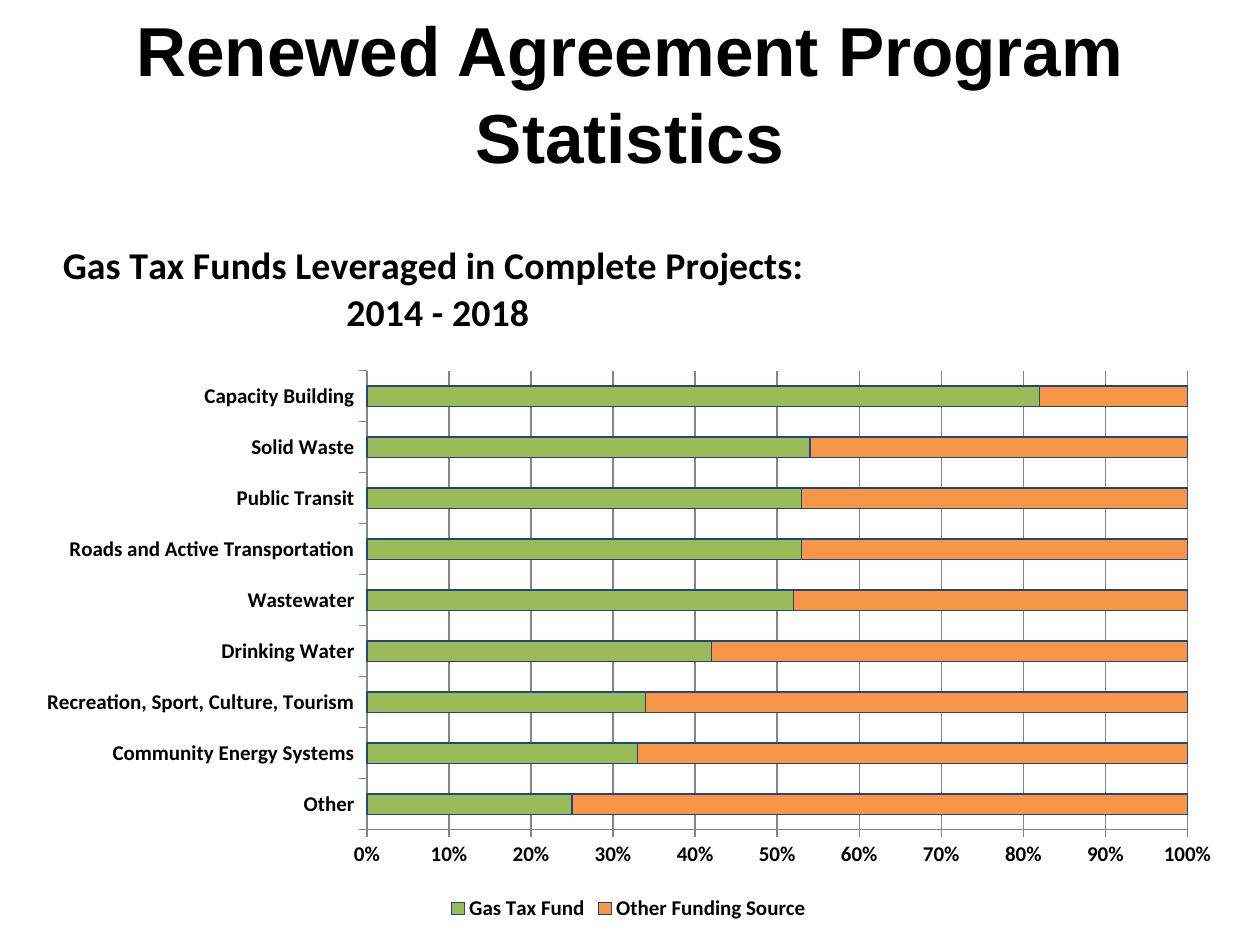
from dataclasses import dataclass

from lxml import etree
from pptx import Presentation
from pptx import util as u
from pptx.chart.data import CategoryChartData
from pptx.dml.color import RGBColor
from pptx.enum import chart as ch
from pptx.enum import text as tx
from pptx.oxml import ns

HUES = {"ink": "000000", "grid": "868686", "edge": "1F497D",
        "gas": "9BBB59", "other": "F79646"}


@dataclass
class Fund:
    name: str
    hue: str
    vals: list[float]


KINDS = ["Other", "Community Energy Systems", "Recreation, Sport, Culture, Tourism",
         "Drinking Water", "Wastewater", "Roads and Active Transportation",
         "Public Transit", "Solid Waste", "Capacity Building"]
SHARES = [0.25, 0.33, 0.34, 0.42, 0.52, 0.53, 0.53, 0.54, 0.82]
FUNDS = [Fund("Gas Tax Fund", "gas", SHARES),
         Fund("Other Funding Source", "other", [round(1 - s, 2) for s in SHARES])]


def color(hue: str) -> RGBColor:
    return RGBColor.from_string(HUES[hue])


def style(font, size: float, face: str = "Calibri", bold: bool = True) -> None:
    font.name, font.size, font.bold = face, u.Pt(size), bold
    font.color.rgb = color("ink")


def write(frame, lines: list[str], size: float, face: str = "Calibri",
          gap: float | None = None) -> None:
    for i, line in enumerate(lines):
        para = frame.add_paragraph() if i else frame.paragraphs[0]
        para.alignment = tx.PP_ALIGN.CENTER
        if gap:
            para.line_spacing = gap
        run = para.add_run()
        run.text = line
        style(run.font, size, face)


def place(after, **spots: float) -> None:
    """Put a manual layout right after the given chart element."""
    for old in after.getparent().findall(ns.qn("c:layout")):
        after.getparent().remove(old)
    outer = etree.Element(ns.qn("c:layout"))
    box = etree.SubElement(outer, ns.qn("c:manualLayout"))
    if "w" in spots:
        etree.SubElement(box, ns.qn("c:layoutTarget")).set("val", "inner")
    for key in ("x", "y"):
        etree.SubElement(box, ns.qn(f"c:{key}Mode")).set("val", "edge")
    for key, val in spots.items():
        etree.SubElement(box, ns.qn(f"c:{key}")).set("val", str(val))
    after.addnext(outer)


def draw(slide) -> None:
    data = CategoryChartData(number_format="0%")
    data.categories = KINDS
    for fund in FUNDS:
        data.add_series(fund.name, fund.vals)
    chart = slide.shapes.add_chart(
        ch.XL_CHART_TYPE.BAR_STACKED, u.Inches(0.18), u.Inches(1.82),
        u.Inches(9.62), u.Inches(5.53), data).chart
    style(chart.font, 18, bold=False)

    # Bars
    plot = chart.plots[0]
    plot.gap_width, plot.overlap, plot.vary_by_categories = 150, 100, False
    for bars, fund in zip(plot.series, FUNDS):
        bars.format.fill.solid()
        bars.format.fill.fore_color.rgb = color(fund.hue)
        bars.format.line.color.rgb = color("edge")
        bars.format.line.width = u.Pt(0.75)

    # Axes
    for axis in (chart.category_axis, chart.value_axis):
        style(axis.tick_labels.font, 12)
        axis.major_tick_mark = ch.XL_TICK_MARK.OUTSIDE
        axis.minor_tick_mark = ch.XL_TICK_MARK.NONE
        axis.format.line.color.rgb = color("grid")
    scale = chart.value_axis
    scale.minimum_scale, scale.maximum_scale, scale.major_unit = 0, 1, 0.1
    scale.tick_labels.number_format = "0%"
    scale.tick_labels.number_format_is_linked = False
    scale.has_major_gridlines = True
    scale.major_gridlines.format.line.color.rgb = color("grid")

    # Legend
    chart.has_legend = True
    chart.legend.position = ch.XL_LEGEND_POSITION.BOTTOM
    chart.legend.include_in_layout = False
    style(chart.legend.font, 12)

    # Chart title and plot position
    chart.has_title = True
    head = chart.chart_title
    write(head.text_frame, ["Gas Tax Funds Leveraged in Complete Projects: ",
                            "2014 - 2018"], 21.6)
    root = chart.element
    place(root.find(".//" + ns.qn("c:title")).find(ns.qn("c:tx")), x=0.03, y=0.01)
    area = root.find(".//" + ns.qn("c:plotArea"))
    mark = etree.Element("mark")
    area.insert(0, mark)
    place(mark, x=0.284, y=0.203, w=0.677, h=0.659)
    area.remove(mark)


def main() -> None:
    deck = Presentation()
    deck.slide_width, deck.slide_height = u.Inches(10), u.Inches(7.5)
    slide = deck.slides.add_slide(deck.slide_layouts[5])

    # Slide title
    title = slide.shapes.title
    title.left, title.top = u.Inches(0.5), u.Inches(0.09)
    title.width, title.height = u.Inches(9), u.Inches(1.25)
    title.text_frame.vertical_anchor = tx.MSO_ANCHOR.MIDDLE
    write(title.text_frame, ["Renewed Agreement Program Statistics"], 39.6,
          face="Arial", gap=1.05)

    draw(slide)
    deck.save("out.pptx")


if __name__ == "__main__":
    main()
